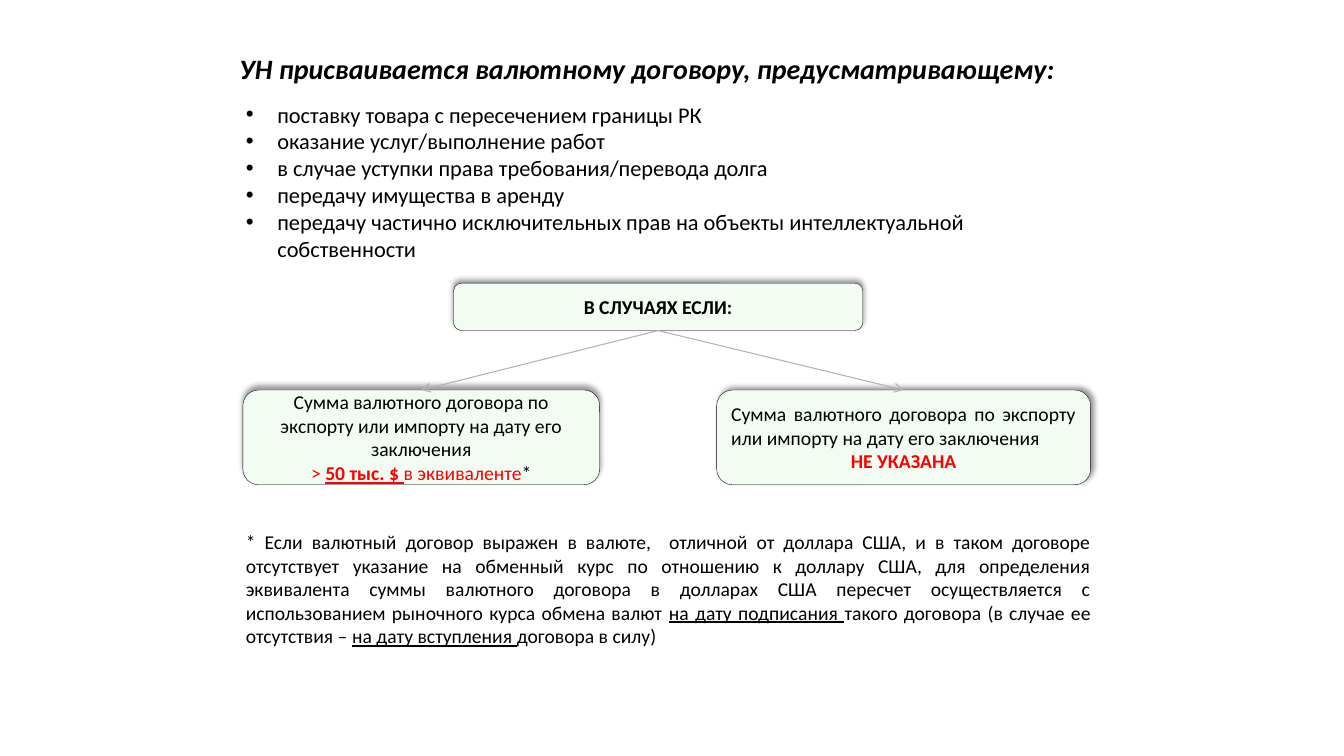
from dataclasses import dataclass
from lxml import etree
from pptx import Presentation, util as u
from pptx.dml.color import RGBColor
from pptx.enum import shapes, text
from pptx.oxml import ns


@dataclass(frozen=True)
class Theme:
    font: str = "Calibri"
    ink: str = "000000"
    red: str = "FF0000"
    page: str = "FFFFFF"
    mint: str = "F2FCF2"
    grey: str = "B2B2B2"
    head: int = 20
    list: int = 16
    body: int = 14


T = Theme()
LEFT, MID, JUST = (text.PP_ALIGN.LEFT, text.PP_ALIGN.CENTER,
                   text.PP_ALIGN.JUSTIFY)


def rgb(code):
    return RGBColor.from_string(code)


def pts(*box):
    return [u.Pt(v) for v in box]


def sub(node, tag, **attrs):
    return etree.SubElement(node, ns.qn(tag), {k: str(v) for k, v in attrs.items()})


def write(para, words, size=T.body, color=T.ink, bold=False, italic=False,
          under=False, align=None):
    """Add one formatted run to a paragraph."""
    if align is not None:
        para.alignment = align
    run = para.add_run()
    run.text = words
    font = run.font
    font.name, font.size = T.font, u.Pt(size)
    font.bold, font.italic, font.underline = bold, italic, under
    font.color.rgb = rgb(color)


def bullet(para, indent):
    props = para._p.get_or_add_pPr()
    props.set("marL", str(u.Pt(indent)))
    props.set("indent", str(-u.Pt(indent)))
    sub(props, "a:buFont", typeface="Arial")
    sub(props, "a:buChar", char="•")


def area(slide, box):
    frame = slide.shapes.add_textbox(*pts(*box)).text_frame
    frame.word_wrap = True
    return frame


# Title band
def title(slide, box):
    band = slide.shapes.add_shape(shapes.MSO_SHAPE.RECTANGLE, *pts(*box))
    band.shadow.inherit = False
    band.fill.solid()
    band.fill.fore_color.rgb = rgb(T.page)
    band.line.fill.background()
    frame = band.text_frame
    frame.vertical_anchor = text.MSO_ANCHOR.MIDDLE
    write(frame.paragraphs[0],
          "УН присваивается валютному договору, предусматривающему:",
          size=T.head, bold=True, italic=True, align=MID)


# Bulleted list of contract kinds
def kinds(slide, box):
    items = ["поставку товара с пересечением границы РК",
             "оказание услуг/выполнение работ",
             "в случае уступки права требования/перевода долга",
             "передачу имущества в аренду",
             "передачу частично исключительных прав на объекты "
             "интеллектуальной собственности"]
    frame = area(slide, box)
    for i, item in enumerate(items):
        para = frame.add_paragraph() if i else frame.paragraphs[0]
        bullet(para, 22.5)
        write(para, item, size=T.list, align=LEFT)


# Rounded card with a soft shadow
def card(slide, box, angle=270):
    shape = slide.shapes.add_shape(shapes.MSO_SHAPE.ROUNDED_RECTANGLE, *pts(*box))
    shape.fill.solid()
    shape.fill.fore_color.rgb = rgb(T.mint)
    shape.line.color.rgb = rgb(T.ink)
    shape.line.width = u.Pt(0.25)
    shape.shadow.inherit = False
    glow = sub(shape._element.spPr.find(ns.qn("a:effectLst")), "a:outerShdw",
               blurRad=u.Pt(4), dist=u.Pt(3), dir=angle * 60000,
               algn="b", rotWithShape=0)
    sub(sub(glow, "a:srgbClr", val=T.ink), "a:alpha", val=40000)
    shape.text_frame.word_wrap = True
    shape.text_frame.vertical_anchor = text.MSO_ANCHOR.MIDDLE
    return shape


def arrow(slide, start, end):
    line = slide.shapes.add_connector(shapes.MSO_CONNECTOR.STRAIGHT, 0, 0, 0, 0)
    line.begin_connect(start, 2)
    line.end_connect(end, 0)
    line.line.color.rgb = rgb(T.grey)
    line.line.width = u.Pt(0.75)
    sub(line.line._get_or_add_ln(), "a:tailEnd", type="arrow")
    sub(line._element.spPr, "a:effectLst")


# Condition tree: one root, two branches
def tree(slide, box):
    x, y, w, h = box
    low, tall, wide = 67.7, 33.8, 267.1
    top = y + h - low
    root = card(slide, (x + 150.5, y, 292.3, tall))
    write(root.text_frame.paragraphs[0], "В СЛУЧАЯХ ЕСЛИ:", bold=True, align=MID)

    over = card(slide, (x, top, 254.9, low))
    blank = card(slide, (x + w - wide, top, wide, low), angle=315)
    for leaf, align in ((over, MID), (blank, JUST)):
        write(leaf.text_frame.paragraphs[0],
              "Сумма валютного договора по экспорту или импорту "
              "на дату его заключения", align=align)
        arrow(slide, root, leaf)

    para = over.text_frame.add_paragraph()
    write(para, "> ", color=T.red, align=MID)
    write(para, "50 тыс. $ ", color=T.red, bold=True, under=True)
    write(para, "в эквиваленте", color=T.red)
    write(para, "*")
    write(blank.text_frame.add_paragraph(), "НЕ УКАЗАНА",
          color=T.red, bold=True, align=MID)


# Footnote, with every second part underlined
def note(slide, box):
    parts = ["* Если валютный договор выражен в валюте,  отличной от доллара США, "
             "и в таком договоре отсутствует указание на обменный курс по "
             "отношению к доллару США, для определения эквивалента суммы "
             "валютного договора в долларах США пересчет осуществляется с "
             "использованием рыночного курса обмена валют ",
             "на дату подписания ",
             "такого договора (в случае ее отсутствия – ",
             "на дату вступления ",
             "договора в силу)"]
    para = area(slide, box).paragraphs[0]
    for i, part in enumerate(parts):
        write(para, part, under=i % 2 == 1, align=JUST)


def main():
    deck = Presentation()
    deck.slide_width, deck.slide_height = pts(960, 540)
    slide = deck.slides.add_slide(deck.slide_layouts[6])
    title(slide, (146.2, 29.5, 632.2, 38.9))
    kinds(slide, (168.5, 68.4, 610.5, 121.7))
    tree(slide, (173.5, 202.3, 605.5, 144))
    note(slide, (168.5, 375.1, 617.8, 96.5))
    deck.save("out.pptx")


if __name__ == "__main__":
    main()
